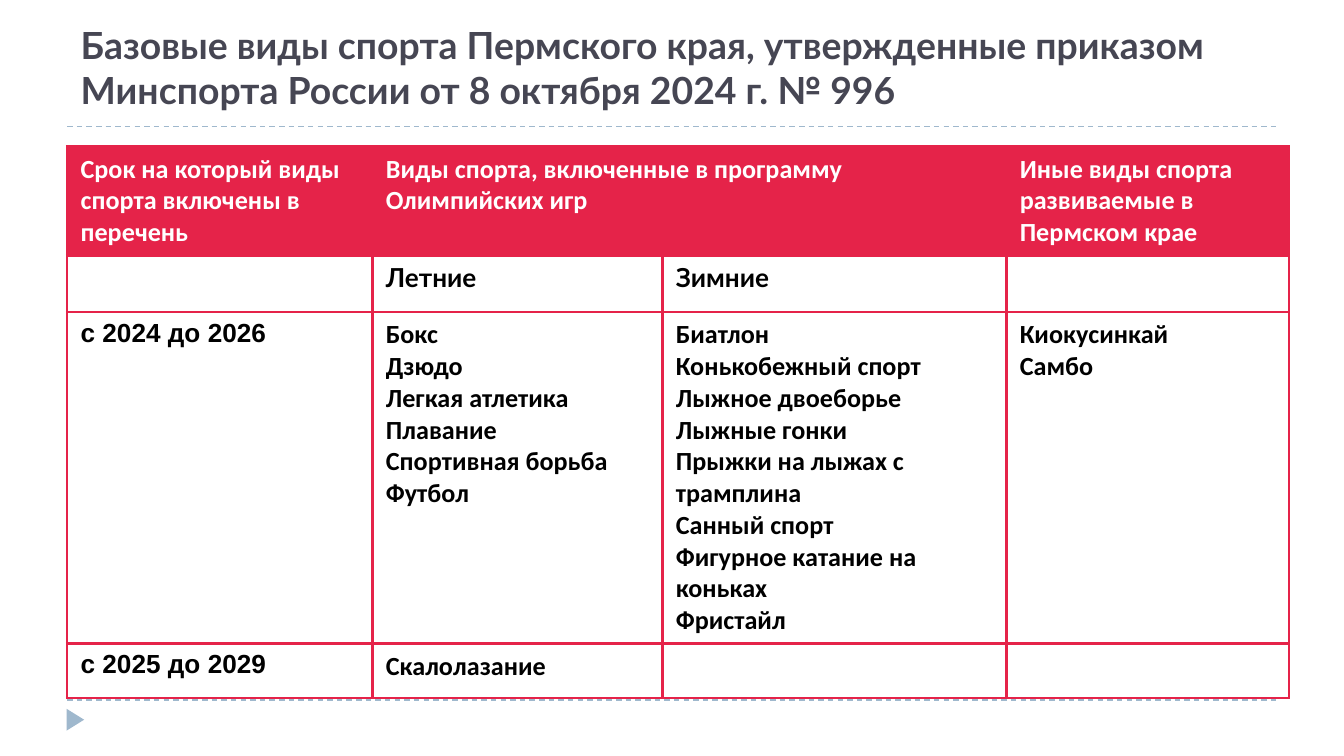
from lxml import etree
from pptx import Presentation
from pptx.dml.color import RGBColor
from pptx.enum import dml, shapes, text
from pptx.oxml import parse_xml
from pptx.oxml.ns import nsdecls, qn
from pptx.util import Cm, Pt

TITLE = ("Базовые виды спорта Пермского края, утвержденные приказом "
         "Минспорта России от 8 октября 2024 г. № 996")
HEADER = ["Срок на который виды спорта включены в перечень",
          "Виды спорта, включенные в программу Олимпийских игр",
          "",
          "Иные виды спорта развиваемые в Пермском крае"]
SEASONS = ["", "Летние", "Зимние", ""]
PERIODS = [
    ["с 2024 до 2026",
     "Бокс\nДзюдо\nЛегкая атлетика\nПлавание\nСпортивная борьба\nФутбол",
     "Биатлон\nКонькобежный спорт\nЛыжное двоеборье\nЛыжные гонки\n"
     "Прыжки на лыжах с трамплина\nСанный спорт\n"
     "Фигурное катание на коньках\nФристайл",
     "Киокусинкай\nСамбо"],
    ["с 2025 до 2029", "Скалолазание", "", ""],
]
ROWS = [HEADER, SEASONS, *PERIODS]

THEME = {
    "title": "464653", "accent": "E52349", "rule": "9FB8CD",
    "light": "FFFFFF", "dark": "000000",
    "title_size": 20, "table_size": 14, "border": 1.5, "rule_width": 0.75,
    "heading_font": "Lato", "body_font": "Calibri", "period_font": "Arial",
}

LEFT, RULE_WIDTH = 1.27, 22.86
RULE_TOPS = [2.39, 13.23]
TABLE_TOP = 2.77
COLUMN_WIDTHS = [5.77, 5.48, 6.5, 5.34]
ROW_HEIGHTS = [2.03, 1.07, 5.79, 0.99]


def color(name):
    return RGBColor.from_string(THEME[name])


def style_text(text_frame, font_name, size, color_name):
    for paragraph in text_frame.paragraphs:
        for run in paragraph.runs:
            run.font.name = font_name
            run.font.size = Pt(size)
            run.font.bold = True
            run.font.color.rgb = color(color_name)


def add_title(slide):
    title = slide.shapes.title
    title.left, title.top = Cm(LEFT), Cm(0.18)
    title.width, title.height = Cm(RULE_WIDTH), Cm(2.06)
    frame = title.text_frame
    frame.text = TITLE
    frame.word_wrap = True
    frame.auto_size = text.MSO_AUTO_SIZE.NONE
    frame.vertical_anchor = text.MSO_ANCHOR.BOTTOM
    frame.paragraphs[0].alignment = text.PP_ALIGN.LEFT
    style_text(frame, THEME["heading_font"], THEME["title_size"], "title")


def add_rule(slide, top):
    rule = slide.shapes.add_connector(
        shapes.MSO_CONNECTOR.STRAIGHT,
        Cm(LEFT), Cm(top), Cm(LEFT + RULE_WIDTH), Cm(top))
    rule.line.color.rgb = color("rule")
    rule.line.width = Pt(THEME["rule_width"])
    rule.line.dash_style = dml.MSO_LINE.DASH
    etree.SubElement(rule._element.spPr, qn("a:effectLst"))


def add_marker(slide):
    marker = slide.shapes.add_shape(
        shapes.MSO_SHAPE.ISOSCELES_TRIANGLE,
        Cm(1.22), Cm(13.44), Cm(0.41), Cm(0.33))
    marker.rotation = 90
    marker.shadow.inherit = False
    marker.fill.solid()
    marker.fill.fore_color.rgb = color("rule")
    marker.line.fill.background()


def add_borders(cell):
    properties = cell._tc.get_or_add_tcPr()
    for index, side in enumerate("LRTB"):
        properties.insert(index, parse_xml(
            f'<a:ln{side} {nsdecls("a")} w="{Pt(THEME["border"])}"><a:solidFill>'
            f'<a:srgbClr val="{THEME["accent"]}"/></a:solidFill></a:ln{side}>'))


def cell_font(row, column):
    if row == 1:
        return THEME["heading_font"]
    return THEME["period_font" if row > 1 and column == 0 else "body_font"]


def add_sports_table(slide):
    table = slide.shapes.add_table(
        len(ROWS), len(COLUMN_WIDTHS), Cm(LEFT), Cm(TABLE_TOP),
        Cm(sum(COLUMN_WIDTHS)), Cm(sum(ROW_HEIGHTS))).table
    for column, width in zip(table.columns, COLUMN_WIDTHS):
        column.width = Cm(width)
    for row, height in zip(table.rows, ROW_HEIGHTS):
        row.height = Cm(height)
    for r, values in enumerate(ROWS):
        for c, value in enumerate(values):
            cell = table.cell(r, c)
            cell.fill.solid()
            cell.fill.fore_color.rgb = color("light" if r else "accent")
            add_borders(cell)
            if value:
                cell.text_frame.text = value
                style_text(cell.text_frame, cell_font(r, c),
                           THEME["table_size"], "dark" if r else "light")
    table.cell(0, 1).merge(table.cell(0, 2))


def main():
    presentation = Presentation()
    presentation.slide_width, presentation.slide_height = Cm(25.4), Cm(14.29)
    slide = presentation.slides.add_slide(presentation.slide_layouts[5])
    for top in RULE_TOPS:
        add_rule(slide, top)
    add_marker(slide)
    add_title(slide)
    add_sports_table(slide)
    presentation.save("out.pptx")


if __name__ == "__main__":
    main()
